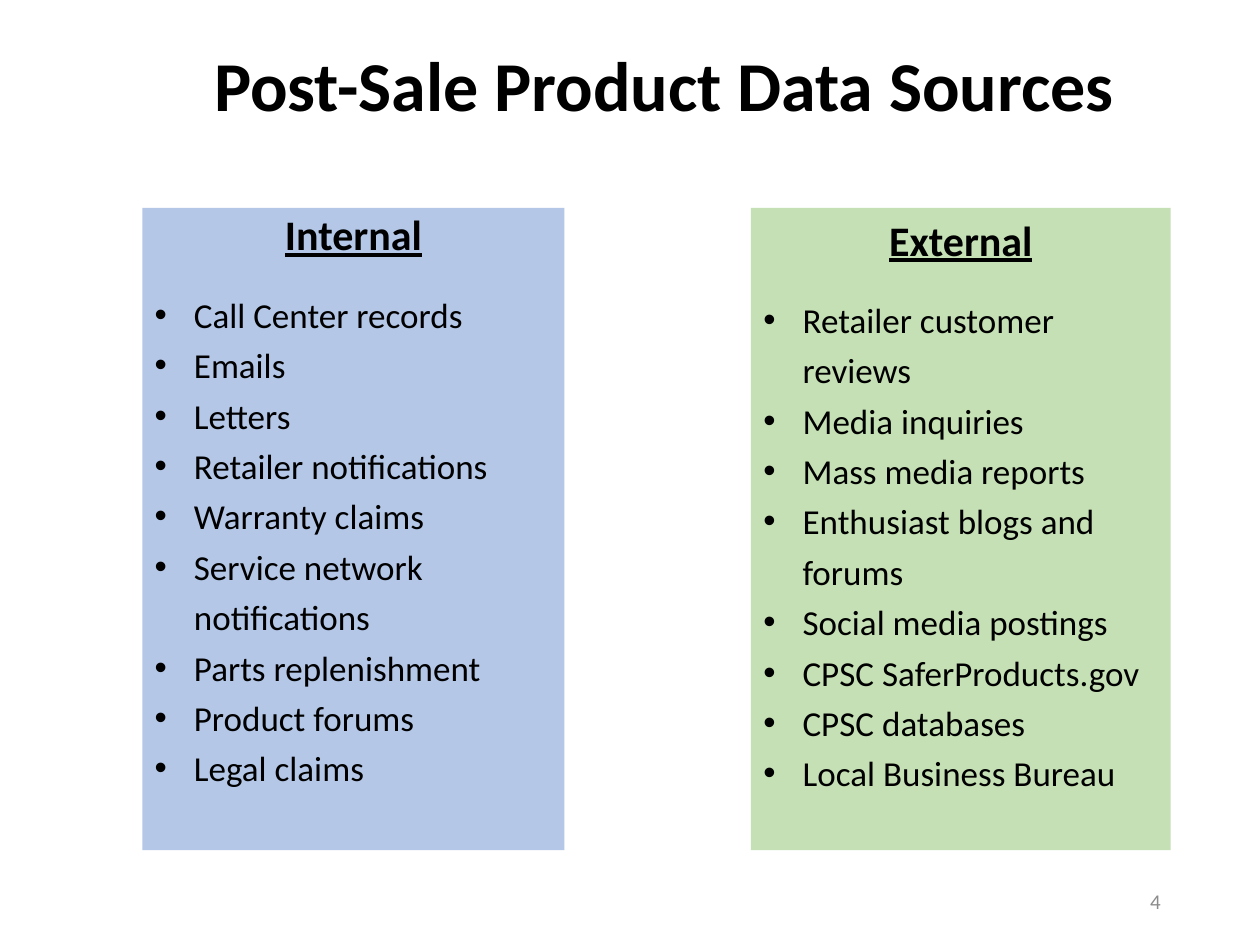
from lxml import etree
from pptx import Presentation
from pptx.dml.color import RGBColor
from pptx.enum.shapes import MSO_SHAPE
from pptx.enum.text import MSO_ANCHOR, MSO_AUTO_SIZE, PP_ALIGN
from pptx.oxml.ns import qn
from pptx.util import Cm, Pt

RECT = MSO_SHAPE.RECTANGLE
TOP, MIDDLE = MSO_ANCHOR.TOP, MSO_ANCHOR.MIDDLE
LEFT, CENTER, RIGHT = PP_ALIGN.LEFT, PP_ALIGN.CENTER, PP_ALIGN.RIGHT
FIXED = MSO_AUTO_SIZE.NONE

BLUE = RGBColor(0xB4, 0xC7, 0xE7)
GREEN = RGBColor(0xC5, 0xE0, 0xB4)
BLACK = RGBColor(0, 0, 0)
GREY = RGBColor(0x8C, 0x8C, 0x8C)
FONT = "Calibri"

# Content
TITLE = "Post-Sale Product Data Sources"
PAGE = "4"
# heading, left, width, fill, heading line spacing, items
PANELS = [
    ("Internal", 2.87, 8.51, BLUE, 0.9, [
        "Call Center records", "Emails", "Letters", "Retailer notifications",
        "Warranty claims", "Service network notifications",
        "Parts replenishment", "Product forums", "Legal claims"]),
    ("External", 15.14, 8.46, GREEN, 1.0, [
        "Retailer customer reviews", "Media inquiries", "Mass media reports",
        "Enthusiast blogs and forums", "Social media postings",
        "CPSC SaferProducts.gov", "CPSC databases",
        "Local Business Bureau"]),
]
PANEL_TOP, PANEL_HIGH = 4.19, 12.95


def style(para, size, color=BLACK, bold=False, under=False):
    for run in para.runs:
        font = run.font
        font.name, font.size, font.color.rgb = FONT, Pt(size), color
        font.bold, font.underline = bold, under


def bullet(para):
    props = para._p.get_or_add_pPr()
    props.set("marL", str(Cm(0.79)))
    props.set("indent", str(-Cm(0.79)))
    etree.SubElement(props, qn("a:buFont")).set("typeface", "Arial")
    etree.SubElement(props, qn("a:buChar")).set("char", "•")


def add_panel(slide, head, left, width, fill, pitch, items):
    box = slide.shapes.add_shape(
        RECT, Cm(left), Cm(PANEL_TOP), Cm(width), Cm(PANEL_HIGH))
    box.shadow.inherit = False
    box.fill.solid()
    box.fill.fore_color.rgb = fill
    box.line.fill.background()
    frame = box.text_frame
    frame.word_wrap = True
    frame.vertical_anchor = TOP
    frame.text = "\n".join([head] + items)
    first, *rest = frame.paragraphs
    first.alignment = CENTER
    first.line_spacing = pitch
    first.space_after = Pt(14.6)
    style(first, 24, bold=True, under=True)
    for para in rest:
        para.alignment = LEFT
        para.line_spacing = 1.2
        style(para, 20)
        bullet(para)


def main():
    deck = Presentation()
    deck.slide_width, deck.slide_height = Cm(25.4), Cm(19.05)
    slide = deck.slides.add_slide(deck.slide_layouts[5])

    # Title
    title = slide.shapes.title
    title.left, title.top = Cm(4.06), Cm(0.71)
    title.width, title.height = Cm(19.3), Cm(1.96)
    frame = title.text_frame
    frame.text = TITLE
    frame.word_wrap = False
    frame.auto_size = FIXED
    frame.vertical_anchor = TOP
    frame.paragraphs[0].alignment = LEFT
    style(frame.paragraphs[0], 40, bold=True)

    # Source lists
    for panel in PANELS:
        add_panel(slide, *panel)

    # Page number
    page = slide.shapes.add_textbox(Cm(17.93), Cm(17.65), Cm(5.72), Cm(1.02))
    frame = page.text_frame
    frame.text = PAGE
    frame.word_wrap = True
    frame.vertical_anchor = MIDDLE
    frame.paragraphs[0].alignment = RIGHT
    style(frame.paragraphs[0], 12, GREY)

    deck.save("out.pptx")


if __name__ == "__main__":
    main()
